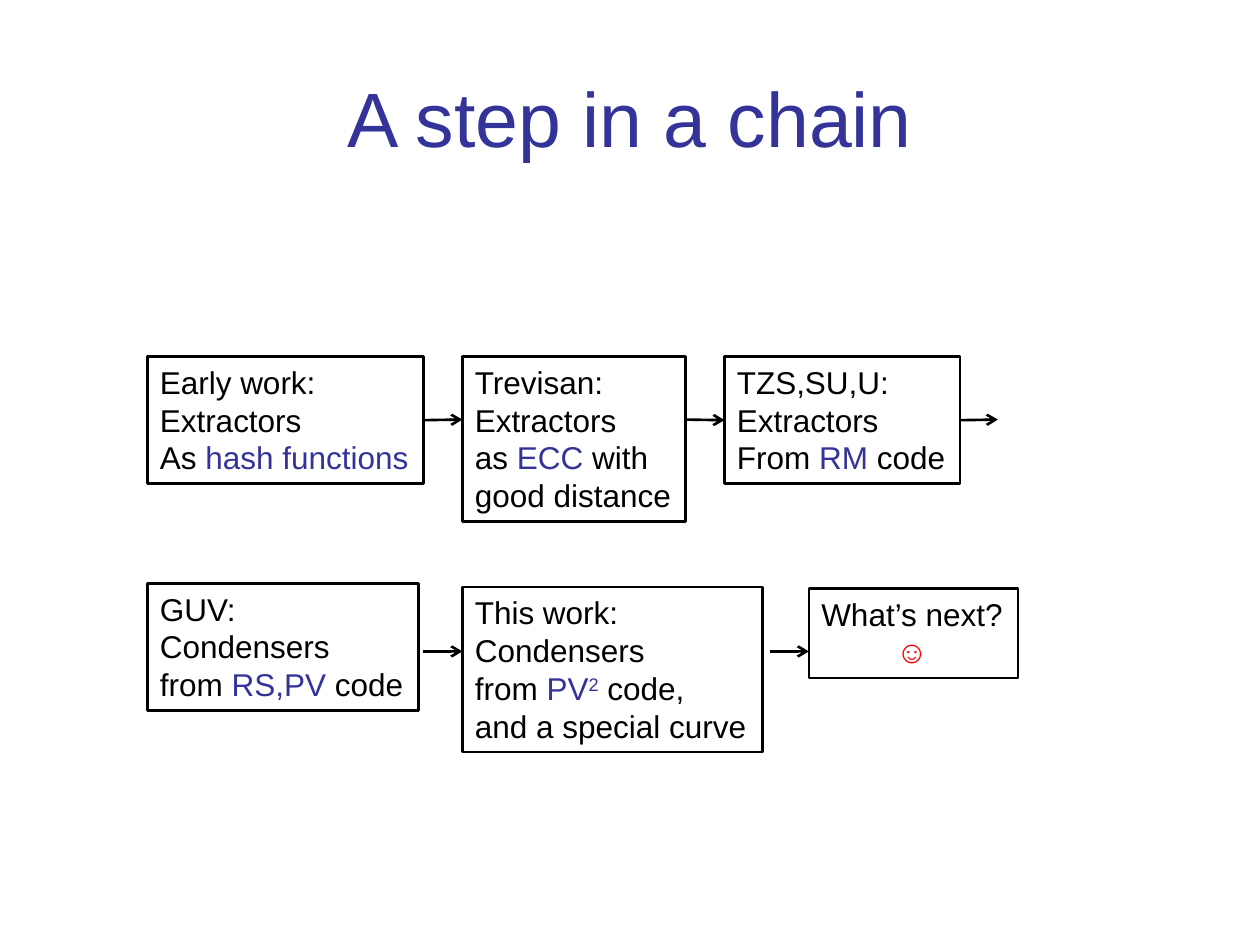
import pptx
import pptx.util
import pptx.dml.color
import pptx.enum.shapes
import pptx.enum.text
import pptx.oxml
import pptx.oxml.ns
from dataclasses import dataclass

Inches = pptx.util.Inches
Pt = pptx.util.Pt
Align = pptx.enum.text.PP_ALIGN
Anchor = pptx.enum.text.MSO_ANCHOR
Fit = pptx.enum.text.MSO_AUTO_SIZE


@dataclass
class Theme:
    font: str = "Arial"
    ink: str = "000000"
    blue: str = "333399"
    red: str = "FF0000"
    head: int = 44
    body: int = 18
    line: float = 1.5


class Deck:
    def __init__(self, theme):
        self.theme = theme
        self.file = pptx.Presentation()
        self.file.slide_width = Inches(10)
        self.file.slide_height = Inches(7.5)
        self.slide = self.file.slides.add_slide(self.file.slide_layouts[6])

    def color(self, code):
        return pptx.dml.color.RGBColor.from_string(code)

    def style(self, run, size, code):
        run.font.name = self.theme.font
        run.font.size = Pt(size)
        run.font.color.rgb = self.color(code)

    def title(self, text, left, top, width, height):
        item = self.slide.shapes.add_textbox(
            Inches(left), Inches(top), Inches(width), Inches(height))
        frame = item.text_frame
        frame.word_wrap = True
        frame.vertical_anchor = Anchor.MIDDLE
        frame.text = text
        para = frame.paragraphs[0]
        para.alignment = Align.CENTER
        self.style(para.runs[0], self.theme.head, self.theme.blue)

    def box(self, left, top, width, height, lines):
        item = self.slide.shapes.add_shape(
            pptx.enum.shapes.MSO_SHAPE.RECTANGLE,
            Inches(left), Inches(top), Inches(width), Inches(height))
        item.shadow.inherit = False
        item.fill.background()
        item.line.color.rgb = self.color(self.theme.ink)
        item.line.width = Pt(self.theme.line)
        frame = item.text_frame
        frame.word_wrap = False
        frame.auto_size = Fit.SHAPE_TO_FIT_TEXT
        frame.vertical_anchor = Anchor.TOP
        frame.text = "\n".join(
            line if isinstance(line, str) else "" for line in lines)
        for para, line in zip(frame.paragraphs, lines):
            para.alignment = Align.LEFT
            if isinstance(line, str):
                self.style(para.runs[0], self.theme.body, self.theme.ink)
                continue
            for text, code in line:
                run = para.add_run()
                run.text = text
                self.style(run, self.theme.body, code)
        return item

    def arrow(self, left, top, right, low, start=None, end=None):
        link = self.slide.shapes.add_connector(
            pptx.enum.shapes.MSO_CONNECTOR.STRAIGHT,
            Inches(left), Inches(top), Inches(right), Inches(low))
        link.line.color.rgb = self.color(self.theme.ink)
        link.line.width = Pt(self.theme.line)
        tail = pptx.oxml.parse_xml(
            f'<a:tailEnd {pptx.oxml.ns.nsdecls("a")} type="arrow"/>')
        link.line._get_or_add_ln().append(tail)
        link._element.spPr.append(pptx.oxml.parse_xml(
            f'<a:effectLst {pptx.oxml.ns.nsdecls("a")}/>'))
        if start is not None:
            link.begin_connect(start, 3)
        if end is not None:
            link.end_connect(end, 1)


def main():
    theme = Theme()
    ink, blue = theme.ink, theme.blue
    deck = Deck(theme)
    deck.title("A step in a chain", 0.5, 0.3, 9, 1.25)

    first, second, row = 1.17, 3.67, 2.83
    early = deck.box(first, row, 2.19, 1.01, [
        "Early work:", "Extractors",
        [("As ", ink), ("hash functions", blue)]])
    deck.box(second, row, 1.77, 1.31, [
        "Trevisan:", "Extractors",
        [("as ", ink), ("ECC", blue), (" with", ink)],
        "good distance"])
    third = deck.box(5.75, row, 1.87, 1.01, [
        "TZS,SU,U:", "Extractors",
        [("From ", ink), ("RM", blue), (" code", ink)]])
    deck.box(first, 4.63, 2.15, 1.01, [
        "GUV:", "Condensers",
        [("from ", ink), ("RS,PV", blue), (" code", ink)]])
    work = deck.box(second, 4.66, 2.38, 1.31, [
        "This work:", "Condensers",
        [("from ", ink), ("PV", blue), ("2", blue), (" code,", ink)],
        "and a special curve"])
    power = work.text_frame.paragraphs[2].runs[2]
    power.font._element.set("baseline", "30000")
    goal = deck.box(6.42, 4.67, 1.66, 0.71, [
        "What’s next?", [("☺", theme.red)]])
    smile = goal.text_frame.paragraphs[1]
    smile.alignment = Align.CENTER
    smile.runs[0].font.bold = True

    step, high, low = 0.31, 3.33, 5.17
    for left, y, start, end in [
            (3.36, high, early, None), (5.44, high, None, third),
            (7.61, high, third, None), (3.36, low, None, None),
            (6.11, low, None, None)]:
        deck.arrow(left, y, left + step, y, start, end)

    deck.file.save("out.pptx")


if __name__ == "__main__":
    main()
